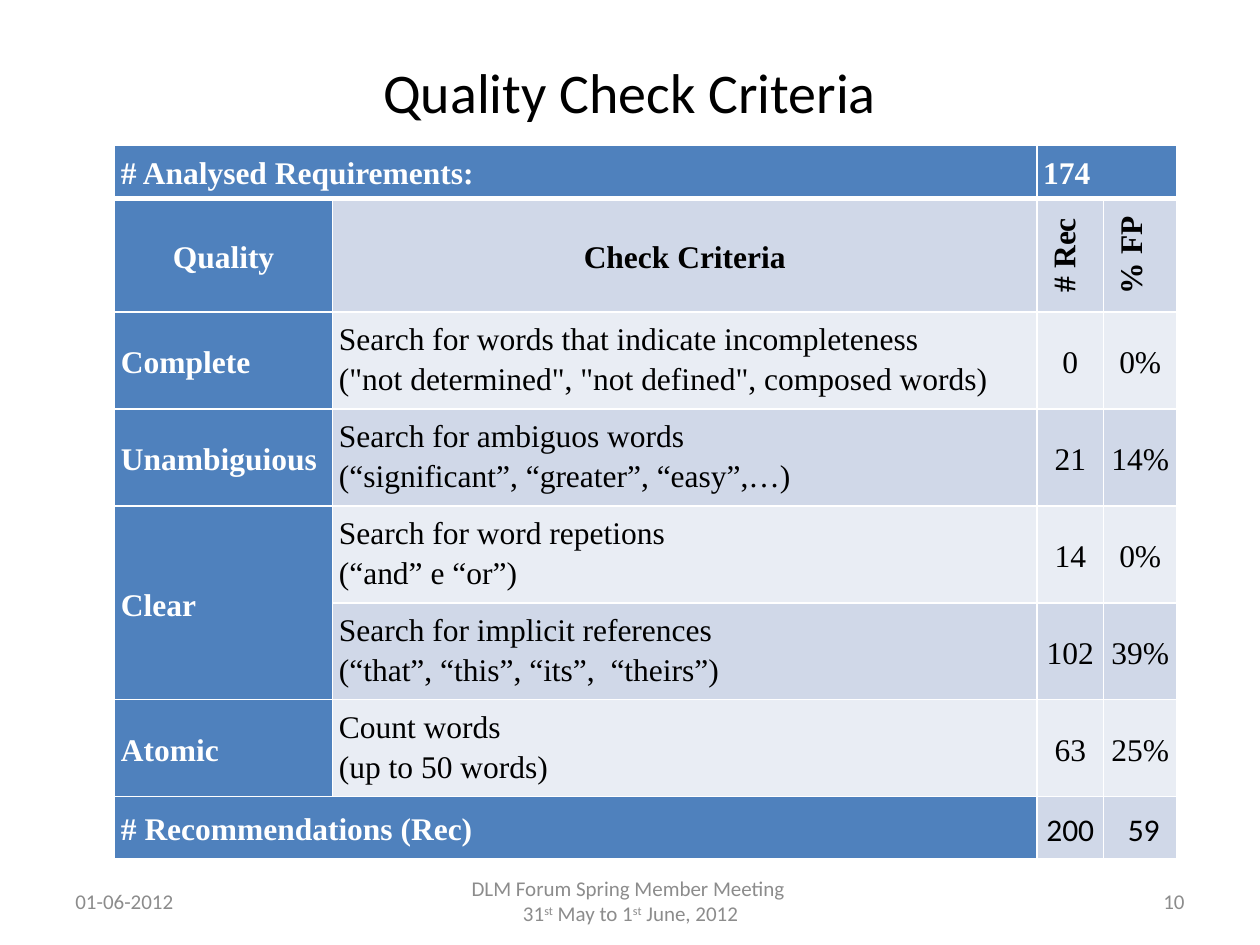
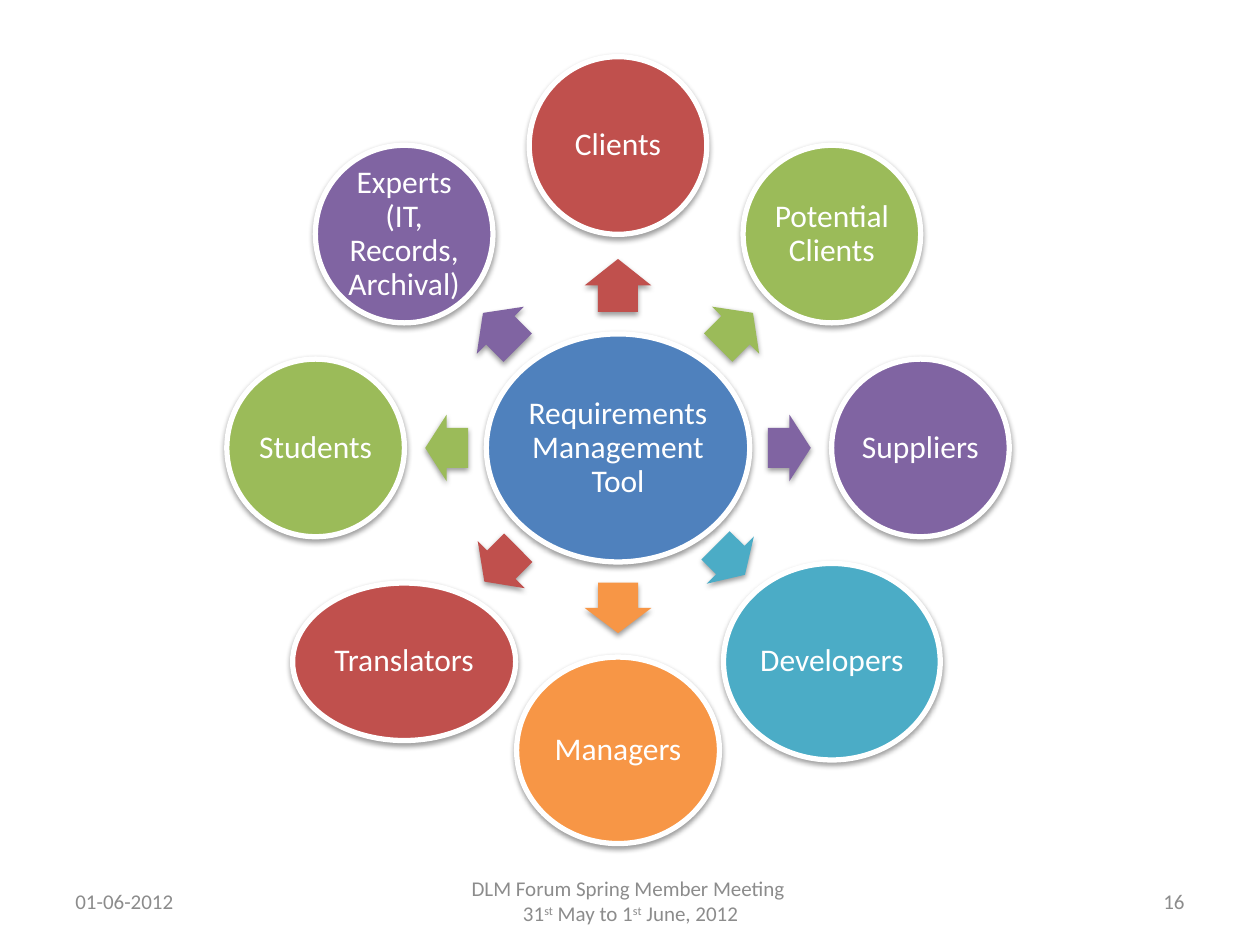
import math
from collections import namedtuple

from lxml import etree
from pptx import Presentation
from pptx.dml.color import RGBColor
from pptx.enum.shapes import MSO_SHAPE
from pptx.enum.text import MSO_ANCHOR, MSO_AUTO_SIZE, PP_ALIGN
from pptx.oxml.ns import qn
from pptx.util import Inches, Pt

# Shared look
WHITE = RGBColor(0xFF, 0xFF, 0xFF)
BLACK = RGBColor(0x00, 0x00, 0x00)
GREY = RGBColor(0x8C, 0x8C, 0x8C)
BLUE = RGBColor(0x4F, 0x81, 0xBD)
RED = RGBColor(0xC0, 0x50, 0x4D)
GREEN = RGBColor(0x9B, 0xBB, 0x59)
PURPLE = RGBColor(0x80, 0x64, 0xA2)
TEAL = RGBColor(0x4B, 0xAC, 0xC6)
ORANGE = RGBColor(0xF7, 0x96, 0x46)
BAND_DARK = RGBColor(0xD0, 0xD8, 0xE8)
BAND_LIGHT = RGBColor(0xE9, 0xED, 0xF4)

BODY_FONT = "Calibri"
TABLE_FONT = "Times New Roman"
LEFT, CENTER, RIGHT = PP_ALIGN.LEFT, PP_ALIGN.CENTER, PP_ALIGN.RIGHT
TOP, MIDDLE = MSO_ANCHOR.TOP, MSO_ANCHOR.MIDDLE
NO_FIT = MSO_AUTO_SIZE.NONE
ELLIPSE, ARROW = MSO_SHAPE.OVAL, MSO_SHAPE.RIGHT_ARROW
TITLE_ONLY, BLANK = 5, 6

Box = namedtuple("Box", "left top width height")
TITLE_BOX = Box(0.5, 0.3, 9, 0.85)
FOOTER_BOX = Box(0.5, 6.95, 9, 0.4)
TABLE_BOX = Box(0.91, 1.15, 8.44, 5.65)
RING_BOX = Box(1.8, 0.45, 6.21, 6.21)

# Footer content: paragraphs of (text, is superscript)
DATE = "01-06-2012"
EVENT = [
    [("DLM Forum Spring Member Meeting ", False)],
    [("31", False), ("st", True), (" May to 1", False), ("st", True), (" June, 2012", False)],
]

# Criteria table; rows grow to fit their text
COLUMN_WIDTHS = [1.73, 5.59, 0.53, 0.58]
ROW_HEIGHTS = [0.34, 0.9, 0.55] + [0.49] * 5
CRITERIA = [
    ["# Analysed Requirements:", "", "174", ""],
    ["Quality", "Check Criteria", "# Rec", "% FP"],
    ["Complete", "Search for words that indicate incompleteness\n"
     "(\"not determined\", \"not defined\", composed words)", "0", "0%"],
    ["Unambiguious", "Search for ambiguos words\n(“significant”, “greater”, “easy”,…)", "21", "14%"],
    ["Clear", "Search for word repetions\n(“and” e “or”)", "14", "0%"],
    ["", "Search for implicit references\n(“that”, “this”, “its”,  “theirs”)", "102", "39%"],
    ["Atomic", "Count words\n(up to 50 words)", "63", "25%"],
    ["# Recommendations (Rec)", "", "200", " 59"],
]
MERGES = [((0, 0), (0, 1)), ((0, 2), (0, 3)), ((4, 0), (5, 0)), ((7, 0), (7, 1))]

# Ring of users, clockwise from the top
RING_RADIUS = 2.4
User = namedtuple("User", "name color width height arrow_length arrow_distance")
USERS = [
    User("Clients", RED, 1.41, 1.41, 0.42, 1.29),
    User("Potential Clients", GREEN, 1.41, 1.41, 0.39, 1.32),
    User("Suppliers", PURPLE, 1.41, 1.41, 0.34, 1.36),
    User("Developers", TEAL, 1.72, 1.56, 0.33, 1.26),
    User("Managers", ORANGE, 1.61, 1.48, 0.4, 1.27),
    User("Translators", RED, 1.77, 1.25, 0.38, 1.31),
    User("Students", GREEN, 1.41, 1.41, 0.34, 1.36),
    User("Experts (IT, Records, Archival)", PURPLE, 1.41, 1.41, 0.39, 1.32),
]


def inches(box):
    return [Inches(length) for length in box]


def set_attributes(target, values):
    for name, value in values.items():
        setattr(target, name, value)


def add_span(para, text, color, size=18, name=BODY_FONT, bold=False):
    span = para.add_run()
    span.text = text
    set_attributes(span.font, {"size": Pt(size), "name": name, "bold": bold})
    span.font.color.rgb = color
    return span


def next_para(frame, index):
    return frame.add_paragraph() if index else frame.paragraphs[0]


def add_title(page, text, box):
    title = page.shapes.title
    set_attributes(title, dict(zip(Box._fields, inches(box))))
    frame = title.text_frame
    set_attributes(frame, {"auto_size": NO_FIT, "vertical_anchor": MIDDLE, "word_wrap": True})
    frame.paragraphs[0].alignment = CENTER
    add_span(frame.paragraphs[0], text, BLACK, size=32)


def add_footer(page, number, box):
    parts = [
        (0, 2.33, LEFT, [[(DATE, False)]]),
        (2.92, 3.17, CENTER, EVENT),
        (6.67, 2.33, RIGHT, [[(str(number), False)]]),
    ]
    for offset, width, alignment, lines in parts:
        place = Box(box.left + offset, box.top, width, box.height)
        frame = page.shapes.add_textbox(*inches(place)).text_frame
        set_attributes(frame, {"word_wrap": True, "vertical_anchor": MIDDLE})
        for index, line in enumerate(lines):
            para = next_para(frame, index)
            para.alignment = alignment
            for text, raised in line:
                span = add_span(para, text, GREY, size=12)
                if raised:
                    span.font._element.set("baseline", "30000")


def set_borders(cell, top, bottom):
    properties = cell._tc.get_or_add_tcPr()
    for side, width in {"lnL": 1, "lnR": 1, "lnT": top, "lnB": bottom}.items():
        line = etree.SubElement(properties, qn("a:" + side), w=str(Pt(width)))
        fill = etree.SubElement(line, qn("a:solidFill"))
        etree.SubElement(fill, qn("a:srgbClr"), val=str(WHITE))


def format_cell(cell, text, row, column):
    last = len(CRITERIA) - 1
    is_label = row == 0 or column == 0 or (row == last and column == 1)
    is_header = row < 2
    is_total = row == last and column > 1
    is_criterion = column == 1 and not is_header
    is_vertical = row == 1 and column > 1

    set_borders(cell, top=3 if row == 1 else 1, bottom=3 if row == 0 else 1)
    cell.fill.solid()
    cell.fill.fore_color.rgb = BLUE if is_label else BAND_DARK if row % 2 else BAND_LIGHT
    set_attributes(cell, {
        "margin_left": Inches(0.05), "margin_right": Inches(0.05),
        "margin_top": Inches(0.04), "margin_bottom": Inches(0.04),
        "vertical_anchor": TOP if is_criterion else MIDDLE,
    })
    if is_vertical:
        cell._tc.get_or_add_tcPr().set("vert", "vert270")
    if not text:
        return

    centered = row == 1 or (row > 1 and column > 1)
    for index, line in enumerate(text.split("\n")):
        para = next_para(cell.text_frame, index)
        set_attributes(para, {"alignment": CENTER if centered else LEFT, "line_spacing": 1.15})
        if is_vertical:
            for side in ("marL", "marR"):
                para._p.get_or_add_pPr().set(side, str(Inches(0.08)))
        add_span(para, line, WHITE if is_label else BLACK,
                 name=BODY_FONT if is_total else TABLE_FONT, bold=is_label or is_header)


def add_criteria_table(page, box):
    frame = page.shapes.add_table(len(ROW_HEIGHTS), len(COLUMN_WIDTHS), *inches(box))
    table = frame.table
    set_attributes(table, {"first_row": False, "horz_banding": False})
    for column, width in zip(table.columns, COLUMN_WIDTHS):
        column.width = Inches(width)
    for row, height in zip(table.rows, ROW_HEIGHTS):
        row.height = Inches(height)
    frame.height = Inches(box.height)
    for start, end in MERGES:
        table.cell(*start).merge(table.cell(*end))
    for row, texts in enumerate(CRITERIA):
        for column, text in enumerate(texts):
            format_cell(table.cell(row, column), text, row, column)


def add_shadowed(page, kind, center, width, height, color):
    x, y = center
    place = Box(x - width / 2, y - height / 2, width, height)
    shape = page.shapes.add_shape(kind, *inches(place))
    shape.fill.solid()
    shape.fill.fore_color.rgb = color
    shape.line.fill.background()
    # Soft shadow straight below the shape
    shape.shadow.inherit = False
    effects = shape._element.spPr.find(qn("a:effectLst"))
    shadow = etree.SubElement(effects, qn("a:outerShdw"), blurRad=str(Pt(3.1)),
                              dist=str(Pt(1.6)), dir="5400000", rotWithShape="0")
    tint = etree.SubElement(shadow, qn("a:srgbClr"), val=str(BLACK))
    etree.SubElement(tint, qn("a:alpha"), val="38000")
    return shape


def add_bubble(page, center, width, height, color, text):
    bubble = add_shadowed(page, ELLIPSE, center, width, height, color)
    bubble.line.color.rgb = WHITE
    bubble.line.width = Pt(3)
    frame = bubble.text_frame
    # Narrow side margins keep the longest word on one line
    set_attributes(frame, {
        "word_wrap": True, "vertical_anchor": MIDDLE,
        "margin_left": Inches(0.01), "margin_right": Inches(0.01),
        "margin_top": Inches(0.03), "margin_bottom": Inches(0.03),
    })
    para = frame.paragraphs[0]
    set_attributes(para, {"alignment": CENTER, "line_spacing": 0.9})
    add_span(para, text, WHITE)


def add_user_ring(page, box):
    middle = (box.left + box.width / 2, box.top + box.height / 2)

    def at(angle, distance):
        turn = math.radians(angle)
        return middle[0] + distance * math.cos(turn), middle[1] + distance * math.sin(turn)

    add_bubble(page, middle, 2.09, 1.81, BLUE, "Requirements Management Tool")
    for index, user in enumerate(USERS):
        angle = (270 + index * 360 / len(USERS)) % 360
        arrow = add_shadowed(page, ARROW, at(angle, user.arrow_distance),
                             user.arrow_length, 0.53, user.color)
        arrow.rotation = angle
        arrow.adjustments[0] = 0.6
        arrow.adjustments[1] = 0.5
        add_bubble(page, at(angle, RING_RADIUS), user.width, user.height, user.color, user.name)


def add_page(deck, layout, number):
    page = deck.slides.add_slide(deck.slide_layouts[layout])
    add_footer(page, number, FOOTER_BOX)
    return page


def main():
    deck = Presentation()
    deck.slide_width, deck.slide_height = Inches(10), Inches(7.5)

    # Quality criteria
    page = add_page(deck, TITLE_ONLY, 10)
    add_title(page, "Quality Check Criteria", TITLE_BOX)
    add_criteria_table(page, TABLE_BOX)

    # Users of the tool
    page = add_page(deck, BLANK, 16)
    add_user_ring(page, RING_BOX)

    deck.save("out.pptx")


if __name__ == "__main__":
    main()
